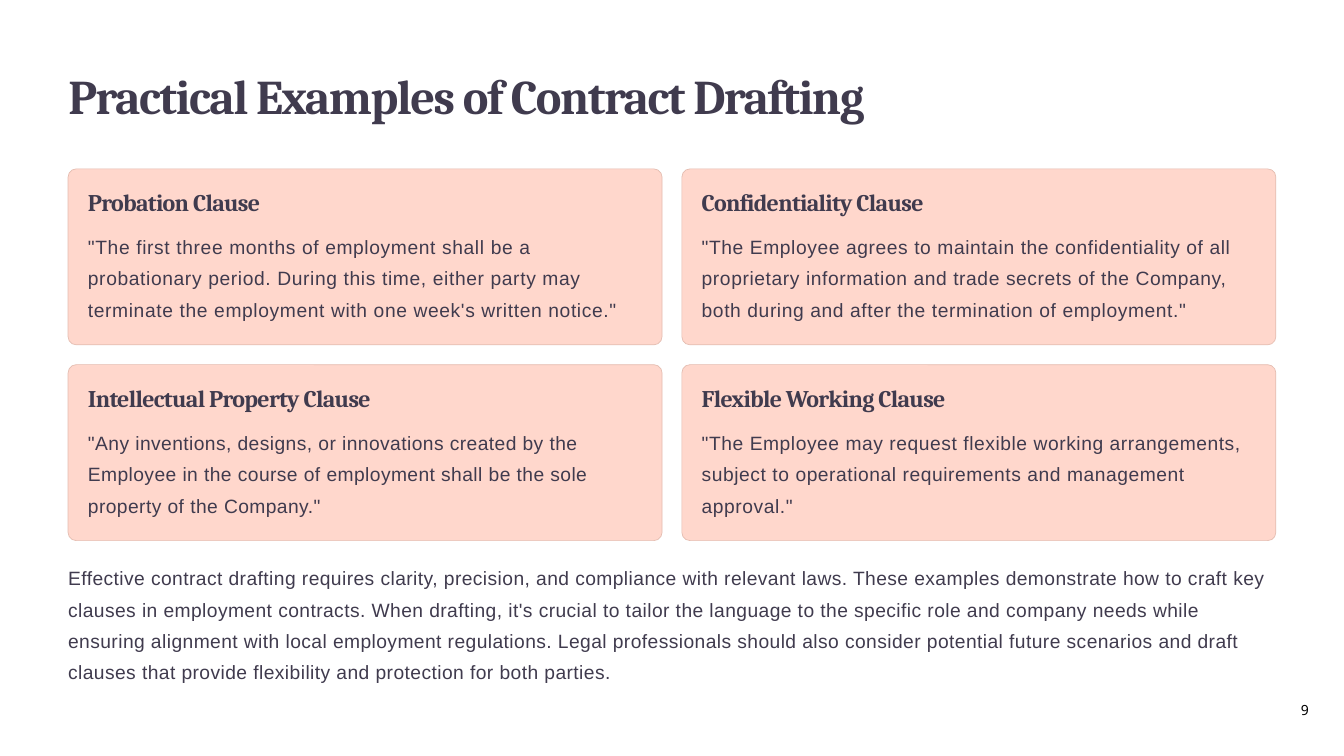
from dataclasses import dataclass

from pptx import Presentation
from pptx.dml.color import RGBColor
from pptx.enum.shapes import MSO_SHAPE
from pptx.enum.text import MSO_ANCHOR, MSO_AUTO_SIZE, PP_ALIGN
from pptx.util import Pt


@dataclass(frozen=True)
class Theme:
    """Colours, fonts and type sizes of the deck."""
    ink: RGBColor = RGBColor(0x40, 0x3B, 0x4E)
    black: RGBColor = RGBColor(0, 0, 0)
    card: RGBColor = RGBColor(0xFF, 0xD7, 0xCC)
    border: RGBColor = RGBColor(0xE4, 0xBD, 0xB1)
    serif: str = "Cambria"
    sans: str = "Arial"
    number: str = "Noto Sans"
    title_size: float = 41.5
    heading_size: float = 20.5
    body_size: float = 16.5
    number_size: float = 12


THEME = Theme()

CLAUSES = [
    ("Probation Clause",
     "\"The first three months of employment shall be a probationary period. During this "
     "time, either party may terminate the employment with one week's written notice.\"", 0.57),
    ("Confidentiality Clause",
     "\"The Employee agrees to maintain the confidentiality of all proprietary information "
     "and trade secrets of the Company, both during and after the termination of "
     "employment.\"", 0.54),
    ("Intellectual Property Clause",
     "\"Any inventions, designs, or innovations created by the Employee in the course of "
     "employment shall be the sole property of the Company.\"", 0.4),
    ("Flexible Working Clause",
     "\"The Employee may request flexible working arrangements, subject to operational "
     "requirements and management approval.\"", 0.5),
]

SUMMARY = (
    "Effective contract drafting requires clarity, precision, and compliance with relevant "
    "laws. These examples demonstrate how to craft key clauses in employment contracts. When "
    "drafting, it's crucial to tailor the language to the specific role and company needs "
    "while ensuring alignment with local employment regulations. Legal professionals should "
    "also consider potential future scenarios and draft clauses that provide flexibility and "
    "protection for both parties."
)


def set_frame(tf):
    """Clear the margins of a text frame and wrap it from the top."""
    tf.margin_left = tf.margin_right = tf.margin_bottom = 0
    tf.margin_top = Pt(1)
    tf.word_wrap = True
    tf.auto_size = MSO_AUTO_SIZE.NONE
    tf.vertical_anchor = MSO_ANCHOR.TOP


def add_text_box(s, x, y, w, h):
    """Add a text box and return its text frame."""
    tf = s.shapes.add_textbox(Pt(x), Pt(y), Pt(w), Pt(h)).text_frame
    set_frame(tf)
    return tf


def write(p, text, font, size, color=THEME.ink, bold=False, tracking=0.0, before=0, spacing=1.0):
    """Fill a paragraph and format its run."""
    p.text = text
    p.alignment = PP_ALIGN.LEFT
    p.space_before = Pt(before)
    p.line_spacing = spacing
    r = p.runs[0]
    r.font.name = font
    r.font.size = Pt(size)
    r.font.bold = bold
    r.font.color.rgb = color
    r.font._element.set("spc", str(round(tracking * 100)))


def write_body(p, text, tracking, before):
    """Fill a paragraph of running text."""
    write(p, text, THEME.sans, THEME.body_size, tracking=tracking, before=before, spacing=1.36)


def add_title(s, text, x, y, w, h):
    """Place the title placeholder in its box."""
    sp = s.shapes.title
    sp.left, sp.top, sp.width, sp.height = Pt(x), Pt(y), Pt(w), Pt(h)
    set_frame(sp.text_frame)
    write(sp.text_frame.paragraphs[0], text, THEME.serif, THEME.title_size,
          bold=True, tracking=-1.28, before=1.1)


def add_card(s, heading, clause, tracking, x, y, w, h):
    """Draw one rounded card with its heading and clause."""
    sp = s.shapes.add_shape(MSO_SHAPE.ROUNDED_RECTANGLE, Pt(x), Pt(y), Pt(w), Pt(h))
    sp.adjustments[0] = 7 / h
    sp.shadow.inherit = False
    sp.fill.solid()
    sp.fill.fore_color.rgb = THEME.card
    sp.line.color.rgb = THEME.border
    sp.line.width = Pt(0.6)
    tf = add_text_box(s, x + 17, y + 15.2, w - 45, h - 34)
    write(tf.paragraphs[0], heading, THEME.serif, THEME.heading_size,
          bold=True, tracking=-0.6, before=1)
    write_body(tf.add_paragraph(), clause, tracking, 9)


def add_card_grid(s, clauses, x, y, w, h, gap=17, columns=2):
    """Lay the cards out in rows with equal gaps."""
    rows = len(clauses) // columns
    cw = (w - gap * (columns - 1)) / columns
    ch = (h - gap * (rows - 1)) / rows
    for i, (heading, clause, tracking) in enumerate(clauses):
        row, col = divmod(i, columns)
        add_card(s, heading, clause, tracking,
                 x + col * (cw + gap), y + row * (ch + gap), cw, ch)


def add_summary(s, text, x, y, w, h):
    """Write the closing paragraph."""
    write_body(add_text_box(s, x, y, w, h).paragraphs[0], text, 0.4, 0.9)


def add_page_number(s, text, x, y, w, h):
    """Write the page number."""
    write(add_text_box(s, x, y, w, h).paragraphs[0], text, THEME.number, THEME.number_size,
          color=THEME.black, before=2.8)


def main():
    """Build the slide and save it."""
    prs = Presentation()
    prs.slide_width, prs.slide_height = Pt(1152), Pt(648)
    s = prs.slides.add_slide(prs.slide_layouts[5])
    add_title(s, "Practical Examples of Contract Drafting", 58.5, 56, 1036, 52)
    add_card_grid(s, CLAUSES, 58.4, 144.8, 1035.2, 318.6)
    add_summary(s, SUMMARY, 58.4, 477.4, 1032, 110)
    add_page_number(s, "9", 1115, 600.5, 12, 18)
    prs.save("out.pptx")


if __name__ == "__main__":
    main()
